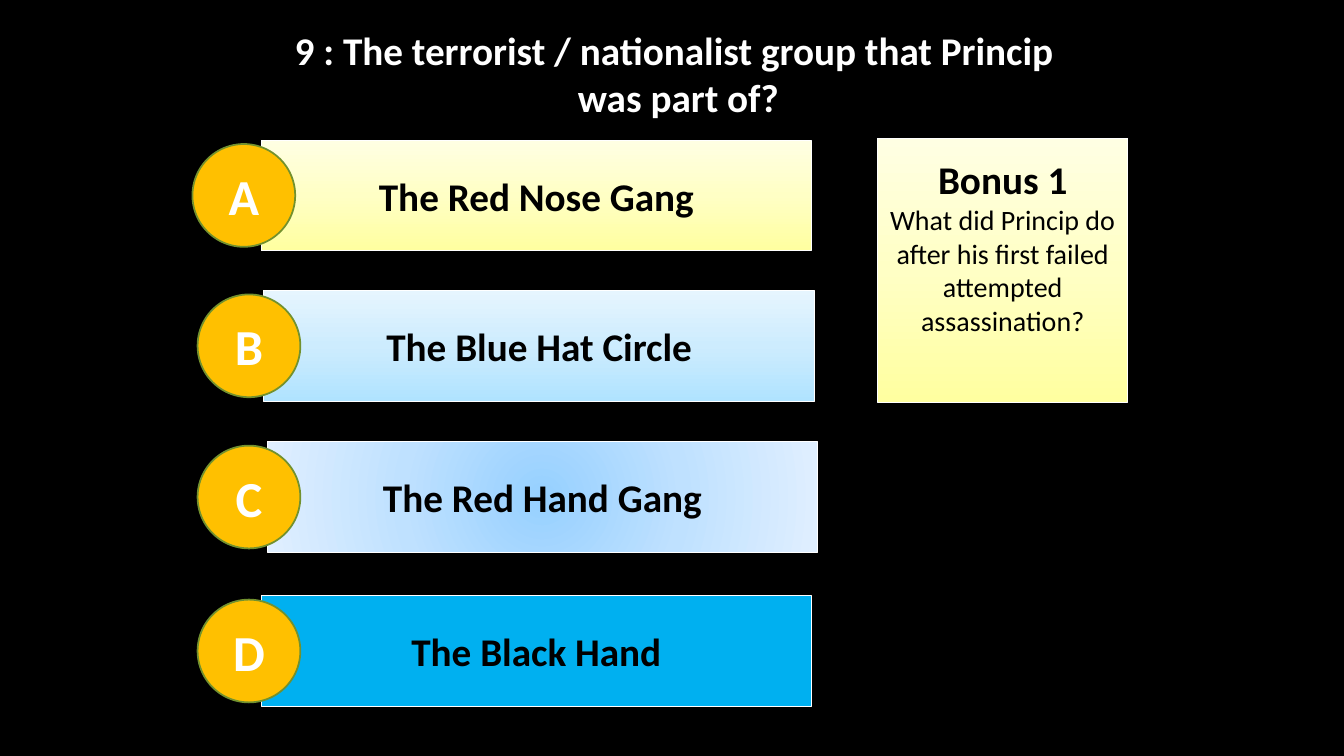
from dataclasses import dataclass

from lxml import etree
from pptx import Presentation
from pptx.dml.color import RGBColor
from pptx.enum.shapes import MSO_SHAPE
from pptx.enum.text import MSO_ANCHOR, PP_ALIGN
from pptx.oxml.ns import qn
from pptx.util import Cm, Pt

RECT, OVAL = MSO_SHAPE.RECTANGLE, MSO_SHAPE.OVAL
TOP, MIDDLE = MSO_ANCHOR.TOP, MSO_ANCHOR.MIDDLE
CENTER = PP_ALIGN.CENTER


@dataclass(frozen=True)
class Theme:
    font: str = "Calibri"
    black: str = "000000"
    white: str = "FFFFFF"
    badge: str = "FFC000"
    badge_line: str = "72912E"
    yellow: tuple = ("FFFFA0", "FFFFC5", "FFFFE3")
    pale_blue: tuple = ("B0E3FF", "CDECFE", "E6F5FE")
    glow_blue: tuple = ("96D0FF", "BFE1FF", "E0EFFF")
    solid_blue: str = "00B0F0"
    heading: int = 28
    body: int = 20
    letter: int = 36


T = Theme()


def add_text(p, text, size, color, bold=True):
    p.alignment = CENTER
    r = p.add_run()
    r.text = text
    r.font.name, r.font.size, r.font.bold = T.font, Pt(size), bold
    r.font.color.rgb = RGBColor.from_string(color)


def add_box(kind, left, top, width, height, fill, line, line_width, radial=False):
    """Add a shape whose fill is one colour, or a tuple of evenly spaced stops."""
    sp = s.shapes.add_shape(kind, Cm(left), Cm(top), Cm(width), Cm(height))
    sp.shadow.inherit = False
    sp.line.color.rgb = RGBColor.from_string(line)
    sp.line.width = Pt(line_width)
    sp.text_frame.vertical_anchor = MIDDLE
    sp.text_frame.word_wrap = True
    if isinstance(fill, str):
        sp.fill.solid()
        sp.fill.fore_color.rgb = RGBColor.from_string(fill)
        return sp
    sp.fill.gradient()
    grad = sp._element.spPr.find(qn("a:gradFill"))
    grad.clear()
    stops = etree.SubElement(grad, qn("a:gsLst"))
    for i, color in enumerate(fill):
        stop = etree.SubElement(stops, qn("a:gs"), pos=str(i * 50000))
        etree.SubElement(stop, qn("a:srgbClr"), val=color)
    if radial:
        shade = etree.SubElement(grad, qn("a:path"), path="circle")
        etree.SubElement(shade, qn("a:fillToRect"),
                         l="50000", t="50000", r="50000", b="50000")
    else:
        etree.SubElement(grad, qn("a:lin"), ang="16200000", scaled="0")
    return sp


prs = Presentation()
prs.slide_width, prs.slide_height = Cm(33.87), Cm(19.05)
s = prs.slides.add_slide(prs.slide_layouts[6])
s.background.fill.solid()
s.background.fill.fore_color.rgb = RGBColor.from_string(T.black)

# Question
tf = s.shapes.add_textbox(Cm(4.78), Cm(0.53), Cm(24.41), Cm(3.71)).text_frame
tf.word_wrap = True
p = tf.paragraphs[0]
add_text(p, "9 : The terrorist / nationalist group that Princip", T.heading, T.white)
p.add_line_break()
add_text(p, " was part of?", T.heading, T.white)

# Answers: letter, text, fill, bar left, badge left, top
answers = [
    ("A", "The Red Nose Gang", T.yellow, 6.58, 4.85, 3.53),
    ("B", "The Blue Hat Circle", T.pale_blue, 6.65, 4.98, 7.32),
    ("C", "The Red Hand Gang", T.glow_blue, 6.73, 4.98, 11.13),
    ("D", "The Black Hand", T.solid_blue, 6.58, 4.98, 15.01),
]
for letter, answer, fill, bar_left, badge_left, top in answers:
    bar = add_box(RECT, bar_left, top, 13.87, 2.79, fill, T.white, 0.5,
                  radial=fill == T.glow_blue)
    add_text(bar.text_frame.paragraphs[0], answer, T.heading, T.black)
    badge = add_box(OVAL, badge_left, top + 0.1, 2.59, 2.59,
                    T.badge, T.badge_line, 1.25)
    add_text(badge.text_frame.paragraphs[0], letter, T.letter, T.white)

# Bonus question
bonus = add_box(RECT, 22.12, 3.48, 6.3, 6.65, T.yellow, T.white, 0.5)
tf = bonus.text_frame
tf.vertical_anchor = TOP
tf.margin_top = Cm(0.44)
add_text(tf.paragraphs[0], "Bonus 1", T.heading, T.black)
add_text(tf.add_paragraph(),
         "What did Princip do after his first failed attempted assassination?",
         T.body, T.black, bold=False)

prs.save("out.pptx")
